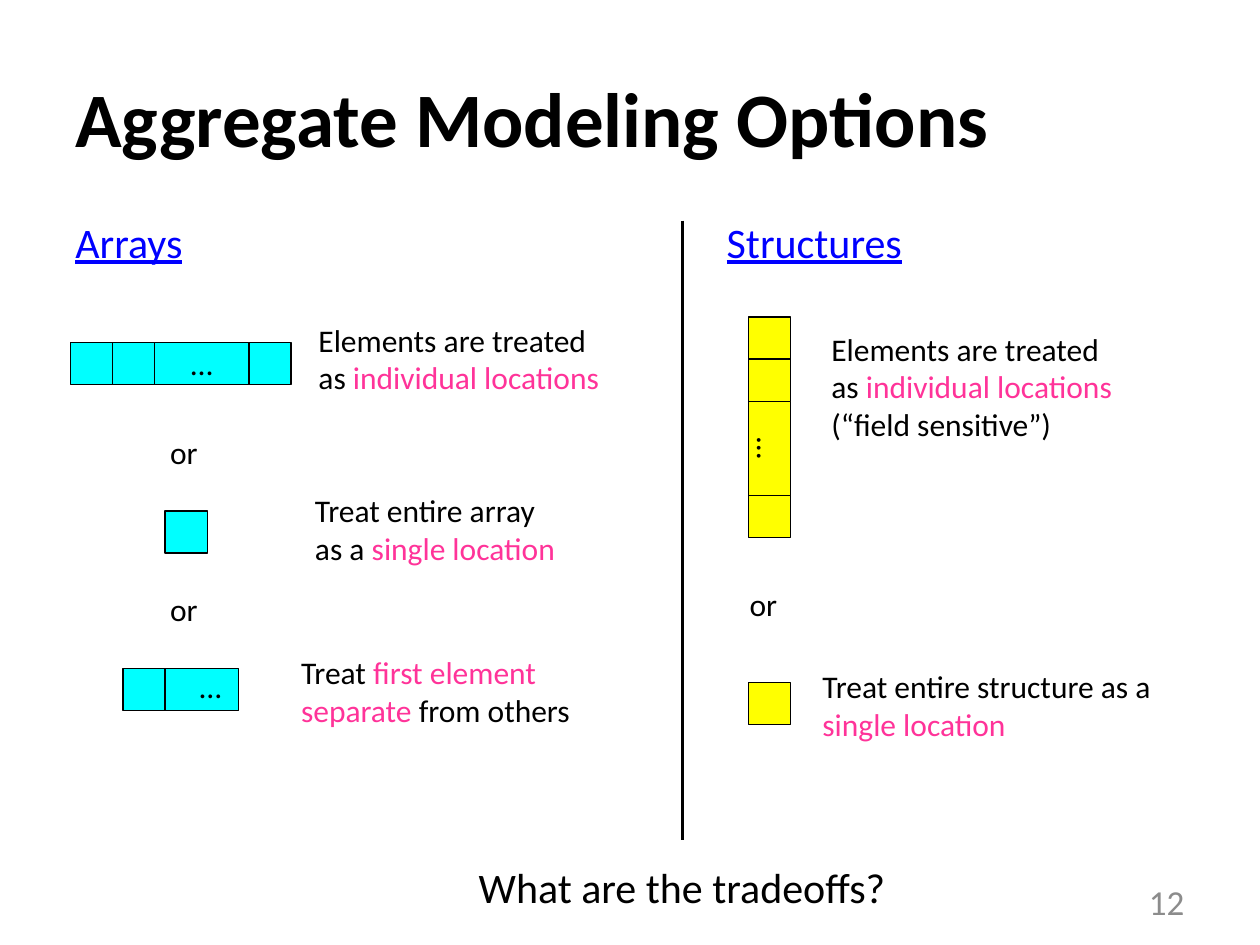
import pptx
import pptx.util
import pptx.dml.color
import pptx.enum.shapes
import pptx.enum.text
import pptx.oxml.ns
import lxml.etree

Cm = pptx.util.Cm
Pt = pptx.util.Pt
RGBColor = pptx.dml.color.RGBColor
ALIGN = pptx.enum.text.PP_ALIGN
ANCHOR = pptx.enum.text.MSO_ANCHOR
FIT = pptx.enum.text.MSO_AUTO_SIZE

BLACK = RGBColor(0x00, 0x00, 0x00)
BLUE = RGBColor(0x00, 0x00, 0xFF)
PINK = RGBColor(0xFF, 0x33, 0x99)
CYAN = RGBColor(0x00, 0xFF, 0xFF)
YELLOW = RGBColor(0xFF, 0xFF, 0x00)
GRAY = RGBColor(0x8C, 0x8C, 0x8C)

CELL = 0.85  # side of a memory cell, in cm


def write(frame, lines, size=18, color=BLACK, align=ALIGN.LEFT, **styles):
    """Fill a frame; a line is a list of strings or (string, color) pairs."""
    for number, line in enumerate(lines):
        para = frame.add_paragraph() if number else frame.paragraphs[0]
        para.alignment = align
        for part in line:
            text, tint = part if isinstance(part, tuple) else (part, color)
            span = para.add_run()
            span.text = text
            span.font.color.rgb = tint
            formats = {"name": "Calibri", "size": Pt(size), **styles}
            for name, value in formats.items():
                setattr(span.font, name, value)


def add_text(page, left, top, width, height, lines, wrap=False,
             anchor=ANCHOR.TOP, fit=FIT.SHAPE_TO_FIT_TEXT, **styles):
    box = page.shapes.add_textbox(Cm(left), Cm(top), Cm(width), Cm(height))
    frame = box.text_frame
    formats = {"word_wrap": wrap, "vertical_anchor": anchor, "auto_size": fit}
    for name, value in formats.items():
        setattr(frame, name, value)
    write(frame, lines, **styles)


def add_strip(page, left, top, cells, fill, vertical=False):
    """Lay out adjoining cells, given as (length, label), along one axis."""
    for length, label in cells:
        # A vertical cell turns about its centre, so shift its unturned box
        shift = (length - CELL) / 2 if vertical else 0
        cell = page.shapes.add_shape(
            pptx.enum.shapes.MSO_SHAPE.RECTANGLE,
            Cm(left - shift), Cm(top + shift), Cm(length), Cm(CELL))
        cell.rotation = 90 if vertical else 0
        cell.shadow.inherit = False
        cell.fill.solid()
        cell.fill.fore_color.rgb = fill
        cell.line.color.rgb = BLACK
        cell.line.width = Pt(0.75)
        if label:
            cell.text_frame.word_wrap = False
            cell.text_frame.vertical_anchor = ANCHOR.MIDDLE
            write(cell.text_frame, [[label]], align=ALIGN.CENTER)
        if vertical:
            top += length
        else:
            left += length


def add_heading(page, left, top, text):
    add_text(page, left, top, 10.16, 13.54, [[text]], wrap=True,
             fit=FIT.NONE, size=24, color=BLUE, underline=True)


def add_or(page, left, top):
    add_text(page, left, top, 1.07, 1.02, [["or"]])


FULL_STRIP = [(CELL, ""), (CELL, ""), (1.9, "…"), (CELL, "")]
SINGLE_CELL = [(CELL, "")]
INDIVIDUAL = [["Elements are treated"],
              ["as ", ("individual locations", PINK)]]


def add_arrays(page, left, top):
    add_heading(page, left, top, "Arrays")
    # Every element on its own
    add_strip(page, left + 0.15, top + 2.67, FULL_STRIP, CYAN)
    add_text(page, left + 4.9, top + 2.11, 6.25, 1.8, INDIVIDUAL)
    add_or(page, left + 1.91, top + 4.37)
    # One location for the array
    add_strip(page, left + 2.06, top + 6.07, SINGLE_CELL, CYAN)
    add_text(page, left + 4.83, top + 5.54, 5.41, 1.8,
             [["Treat entire array"], ["as a ", ("single location", PINK)]])
    add_or(page, left + 1.91, top + 7.54)
    # First element apart from the rest
    add_strip(page, left + 1.21, top + 9.25, [(CELL, ""), (1.48, "")], CYAN)
    add_text(page, left + 4.55, top + 8.81, 6.05, 1.8,
             [["Treat ", ("first element", PINK)],
              [("separate ", PINK), "from others"]])
    add_text(page, left + 2.49, top + 9.09, 0.97, 1.02, [["…"]],
             align=ALIGN.CENTER)


def add_structures(page, left, top):
    add_heading(page, left, top, "Structures")
    # Every field on its own
    add_strip(page, left + 0.69, top + 2.16, FULL_STRIP, YELLOW, vertical=True)
    add_text(page, left + 2.11, top + 2.29, 6.25, 2.57,
             INDIVIDUAL + [["(“field sensitive”)"]])
    add_or(page, left + 0.46, top + 7.44)
    # One location for the structure
    add_strip(page, left + 0.69, top + 9.53, SINGLE_CELL, YELLOW)
    add_text(page, left + 1.93, top + 9.09, 7.39, 1.8,
             [["Treat entire structure as a ", ("single location", PINK)]],
             wrap=True)


def add_divider(page, left, top, height):
    divider = page.shapes.add_connector(
        pptx.enum.shapes.MSO_CONNECTOR.STRAIGHT,
        Cm(left), Cm(top), Cm(left), Cm(top + height))
    divider.line.color.rgb = BLACK
    divider.line.width = Pt(1.25)
    lxml.etree.SubElement(divider._element.spPr,
                          pptx.oxml.ns.qn("a:effectLst"))


def main():
    deck = pptx.Presentation()
    deck.slide_width, deck.slide_height = Cm(25.4), Cm(19.05)
    page = deck.slides.add_slide(deck.slide_layouts[6])

    # Title
    add_text(page, 1.27, 0.76, 22.86, 3.18, [["Aggregate Modeling Options"]],
             wrap=True, anchor=ANCHOR.MIDDLE, fit=FIT.NONE, size=44, bold=True)

    # Two columns and the line between them
    add_arrays(page, 1.27, 4.23)
    add_structures(page, 14.4, 4.23)
    add_divider(page, 13.76, 4.45, 12.49)

    # Closing question and slide number
    add_text(page, 9.4, 17.25, 8.81, 1.27, [["What are the tradeoffs?"]],
             size=24)
    add_text(page, 18.2, 17.66, 5.93, 1.01, [["12"]], wrap=True,
             anchor=ANCHOR.MIDDLE, fit=FIT.NONE, size=20, color=GRAY,
             align=ALIGN.RIGHT)

    deck.save("out.pptx")


if __name__ == "__main__":
    main()
